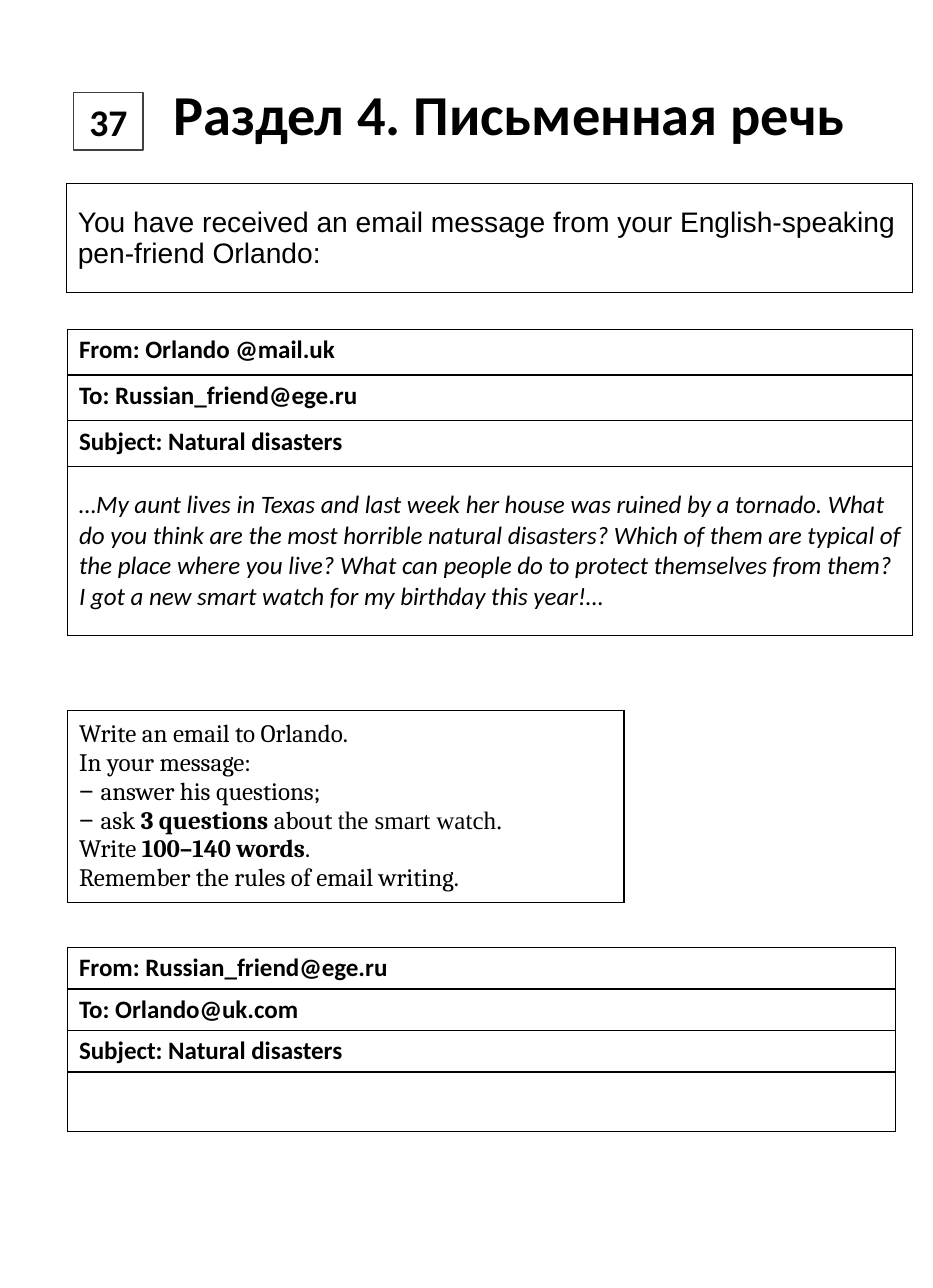
from lxml import etree
from pptx import Presentation
from pptx.dml.color import RGBColor
from pptx.enum.shapes import MSO_SHAPE
from pptx.enum.text import MSO_ANCHOR, MSO_AUTO_SIZE, PP_ALIGN
from pptx.oxml.ns import qn
from pptx.util import Inches, Pt

RECT = MSO_SHAPE.RECTANGLE
TOP, MIDDLE = MSO_ANCHOR.TOP, MSO_ANCHOR.MIDDLE
GROW = MSO_AUTO_SIZE.SHAPE_TO_FIT_TEXT
CENTER, LEFT = PP_ALIGN.CENTER, PP_ALIGN.LEFT
COLORS = {"ink": "000000", "paper": "FFFFFF", "frame": "404040"}
WIDE, HIGH = Inches(8.27), Inches(11.42)
EDGE = 7.26  # left edge shared by the email tables

TASK = "You have received an email message from your English-speaking pen-friend Orlando:"
LETTER = (
    "…My aunt lives in Texas and last week her house was ruined by a tornado. "
    "What do you think are the most horrible natural disasters? "
    "Which of them are typical of the place where you live? "
    "What can people do to protect themselves from them?\n"
    "I got a new smart watch for my birthday this year!…"
)
INBOX = ["From: Orlando @mail.uk", "To: Russian_friend@ege.ru", "Subject: Natural disasters"]
REPLY = ["From: Russian_friend@ege.ru", "To: Orlando@uk.com", "Subject: Natural disasters"]

# Each line is a list of (text, font, bold)
DASH = ("− ", "Arial", False)
RULES = [
    [("Write an email to Orlando.", "Cambria", False)],
    [("In your message:", "Cambria", False)],
    [DASH, ("answer his questions;", "Cambria", False)],
    [DASH, ("ask ", "Cambria", False), ("3 questions ", "Cambria", True),
     ("about ", "Cambria", False), ("the smart watch.", "Times New Roman", False)],
    [("Write ", "Cambria", False), ("100–140 words", "Cambria", True), (".", "Cambria", False)],
    [("Remember the rules of email writing.", "Cambria", False)],
]


def across(share):
    """Percent of the slide's width."""
    return round(WIDE * share / 100)


def down(share):
    """Percent of the slide's height."""
    return round(HIGH * share / 100)


def color(name):
    return RGBColor.from_string(COLORS[name])


def style(run, size, face="Calibri", bold=False, italic=False):
    font = run.font
    font.size, font.name = Pt(size), face
    font.bold, font.italic = bold, italic
    font.color.rgb = color("ink")


def write(frame, text, size, align=LEFT, **look):
    frame.text = text
    for para in frame.paragraphs:
        para.alignment = align
        for run in para.runs:
            style(run, size, **look)


def border(cell):
    props = cell._tc.get_or_add_tcPr()
    for side in ("lnL", "lnR", "lnT", "lnB"):
        line = etree.SubElement(props, qn(f"a:{side}"), w=str(Pt(1)))
        fill = etree.SubElement(line, qn("a:solidFill"))
        etree.SubElement(fill, qn("a:srgbClr"), val=COLORS["ink"])


def add_grid(slide, left, top, width, rows):
    """One-column table with plain black borders; returns its cells."""
    heights = [down(row) for row in rows]
    table = slide.shapes.add_table(
        len(rows), 1, across(left), down(top), across(width), sum(heights)).table
    table.first_row = table.horz_banding = False
    cells = []
    for row, height in zip(table.rows, heights):
        row.height = height
        cell = row.cells[0]
        border(cell)
        cell.fill.background()
        cells.append(cell)
    return cells


def add_email(slide, top, width, heads, step, body):
    """Table of email header rows above a body row; returns the body cell."""
    cells = add_grid(slide, EDGE, top, width, [step] * len(heads) + [body])
    for cell, head in zip(cells, heads):
        write(cell.text_frame, head, 16, bold=True)
    return cells[-1]


def add_rules(cell, lines):
    cell.vertical_anchor = MIDDLE
    para = cell.text_frame.paragraphs[0]
    for index, line in enumerate(lines):
        if index:
            para.add_line_break()
        for text, face, bold in line:
            run = para.add_run()
            run.text = text
            style(run, 16, face, bold)


def add_badge(slide, text):
    badge = slide.shapes.add_shape(RECT, across(7.86), down(7.18), across(7.5), down(4.47))
    badge.shadow.inherit = False
    badge.fill.solid()
    badge.fill.fore_color.rgb = color("paper")
    badge.line.color.rgb = color("frame")
    badge.line.width = Pt(1)
    badge.text_frame.vertical_anchor = MIDDLE
    write(badge.text_frame, text, 24, CENTER, bold=True)


def set_title(slide, text):
    title = slide.shapes.title
    title.left, title.top = across(17.05), down(5.69)
    title.width, title.height = across(75.09), down(6.22)
    frame = title.text_frame
    frame.word_wrap, frame.auto_size = False, GROW
    frame.vertical_anchor = TOP
    write(frame, text, 36, CENTER, bold=True)


def main():
    deck = Presentation()
    deck.slide_width, deck.slide_height = WIDE, HIGH
    slide = deck.slides.add_slide(deck.slide_layouts[5])

    # Heading and task number
    add_badge(slide, "37")
    set_title(slide, "Раздел 4. Письменная речь")

    # Task statement
    task = add_grid(slide, 7.13, 14.27, 90.69, [8.44])[0]
    task.vertical_anchor = MIDDLE
    write(task.text_frame, TASK, 18, face="Arial")

    # Email received
    body = add_email(slide, 25.57, 90.57, INBOX, 3.55, 13.13)
    body.vertical_anchor = MIDDLE
    body.margin_top = body.margin_bottom = Inches(0.08)
    write(body.text_frame, LETTER, 16, italic=True)

    # Rules for the answer
    add_rules(add_grid(slide, EDGE, 55.17, 59.61, [14.89])[0], RULES)

    # Email to be written
    add_email(slide, 73.56, 88.75, REPLY, 3.22, 4.64)

    deck.save("out.pptx")


if __name__ == "__main__":
    main()
